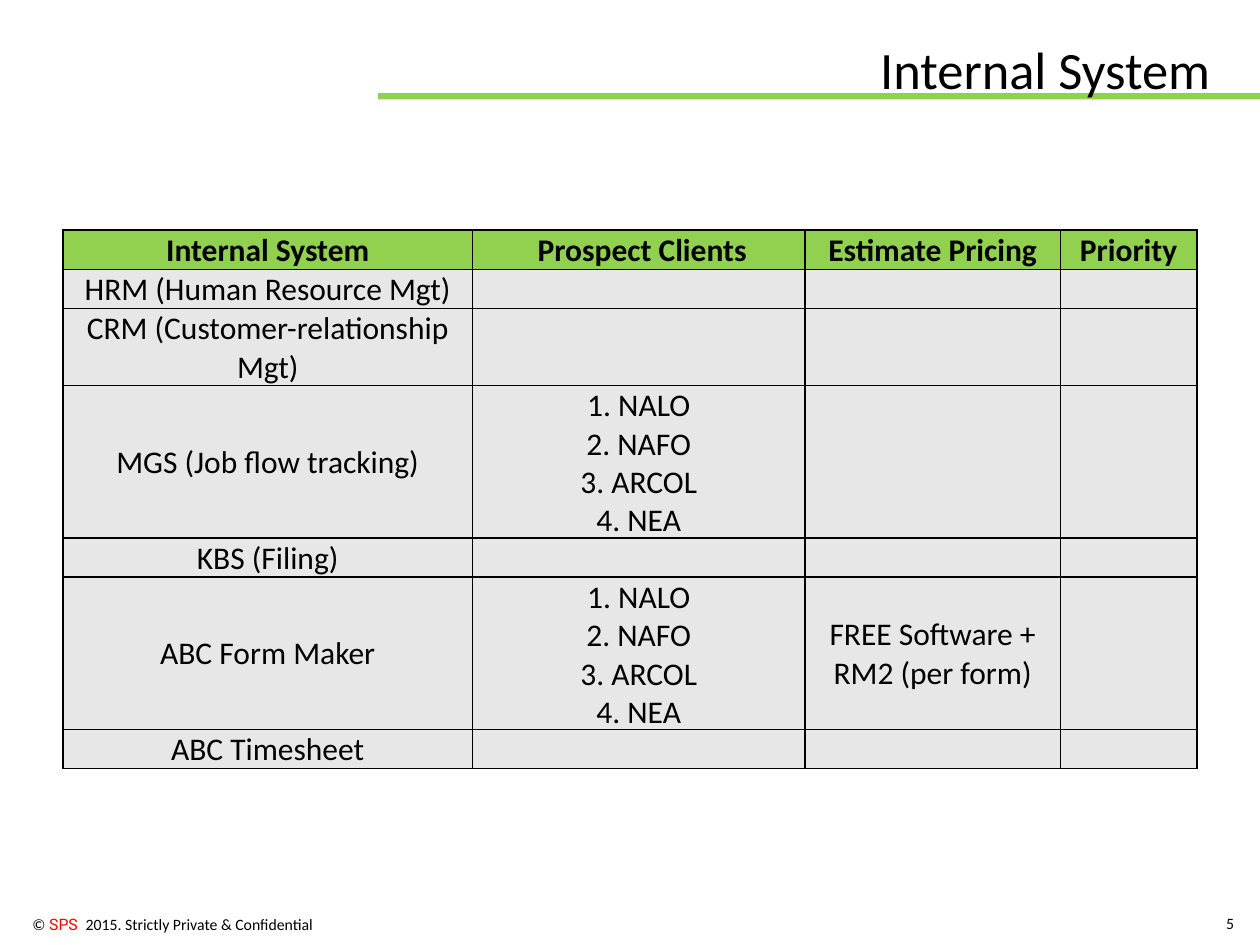
from pptx import Presentation
from pptx.dml.color import RGBColor
from pptx.enum import shapes, text
from pptx.oxml import parse_xml
from pptx.oxml.ns import nsdecls
from pptx.util import Pt

INK = {"green": "92D050", "grey": "E7E7E7", "black": "000000", "red": "FF0000"}
FONT = "Calibri"
MID, LOW = text.MSO_ANCHOR.MIDDLE, text.MSO_ANCHOR.BOTTOM
CENTER, RIGHT = text.PP_ALIGN.CENTER, text.PP_ALIGN.RIGHT
HEAD = ["Internal System", " Prospect Clients", "Estimate Pricing", "Priority"]
LIST = "1. NALO\n2. NAFO\n3. ARCOL\n4. NEA"
ROWS = [
    ("HRM (Human Resource Mgt)", LOW, "", ""),
    ("CRM (Customer-relationship Mgt)", LOW, "", ""),
    ("MGS (Job flow tracking)", MID, LIST, ""),
    ("KBS (Filing)", LOW, "", ""),
    ("ABC Form Maker", MID, LIST, "FREE Software +\nRM2 (per form)"),
    ("ABC Timesheet", MID, "", ""),
]
WIDTHS = [234, 190, 146, 78]
HEIGHTS = [22, 22, 44, 87, 22, 87, 22]


def color(name):
    """Return the named colour."""
    return RGBColor.from_string(INK[name])


def write(frame, runs, size=18, bold=False, align=CENTER):
    """Write (words, font, colour) runs or a plain string into a frame."""
    if isinstance(runs, str):
        runs = [(runs, FONT, "black")]
    para = frame.paragraphs[0]
    para.alignment = align
    for words, face, ink in runs:
        for i, line in enumerate(words.split("\n")):
            if i:
                para.add_line_break()
            run = para.add_run()
            run.text = line
            run.font.name, run.font.size, run.font.bold = face, Pt(size), bold
            run.font.color.rgb = color(ink)


def label(slide, box, runs, anchor=MID, **style):
    """Add a wrapped text box."""
    frame = slide.shapes.add_textbox(*map(Pt, box)).text_frame
    frame.word_wrap = True
    frame.vertical_anchor = anchor
    write(frame, runs, **style)


def border(cell):
    """Draw a thin black line on each side of a cell."""
    props = cell._tc.get_or_add_tcPr()
    for i, side in enumerate(("lnL", "lnR", "lnT", "lnB")):
        props.insert(i, parse_xml(
            f'<a:{side} {nsdecls("a")} w="{Pt(1)}"><a:solidFill>'
            f'<a:srgbClr val="{INK["black"]}"/></a:solidFill></a:{side}>'))


def fill(cell, words, anchor, ink, bold):
    """Format one table cell."""
    cell.margin_left = cell.margin_right = cell.margin_top = Pt(0.75)
    cell.margin_bottom = 0
    cell.vertical_anchor = anchor
    cell.fill.solid()
    cell.fill.fore_color.rgb = color(ink)
    border(cell)
    if words:
        write(cell.text_frame, words, bold=bold)


def grid(slide, left, top):
    """Add the table of systems."""
    table = slide.shapes.add_table(
        len(HEIGHTS), len(WIDTHS), Pt(left), Pt(top),
        Pt(sum(WIDTHS)), Pt(sum(HEIGHTS))).table
    for col, width in zip(table.columns, WIDTHS):
        col.width = Pt(width)
    for row, height in zip(table.rows, HEIGHTS):
        row.height = Pt(height)
    for c, words in enumerate(HEAD):
        fill(table.cell(0, c), words, LOW, "green", True)
    for r, (name, anchor, clients, price) in enumerate(ROWS, 1):
        parts = [(name, anchor), (clients, LOW), (price, MID), ("", MID)]
        for c, (words, place) in enumerate(parts):
            fill(table.cell(r, c), words, place, "grey", False)


def banner(slide, left, top):
    """Add the green rule and the title over it."""
    rule = slide.shapes.add_shape(
        shapes.MSO_SHAPE.RECTANGLE, Pt(left), Pt(top + 35.25), Pt(504), Pt(3.6))
    rule.shadow.inherit = False
    rule.fill.solid()
    rule.fill.fore_color.rgb = color("green")
    rule.line.fill.background()
    label(slide, (left + 138.25, top, 486, 42), "Internal System", size=30)


def footer(slide, top):
    """Add the copyright line and the page number."""
    notice = [("© ", FONT, "black"), ("SPS  ", "Roboto", "red"),
              ("2015. Strictly Private & Confidential", FONT, "black")]
    label(slide, (-23.75, top + 6.5, 209.5, 18), notice,
          anchor=text.MSO_ANCHOR.TOP, size=9, align=RIGHT)
    label(slide, (683.25, top, 29, 29), "5", size=9, align=RIGHT)


def main():
    """Build and save the slide."""
    deck = Presentation()
    deck.slide_width, deck.slide_height = Pt(720), Pt(540)
    slide = deck.slides.add_slide(deck.slide_layouts[6])
    banner(slide, 216, 18)
    grid(slide, 36, 131.5)
    footer(slide, 512.75)
    deck.save("out.pptx")


if __name__ == "__main__":
    main()
